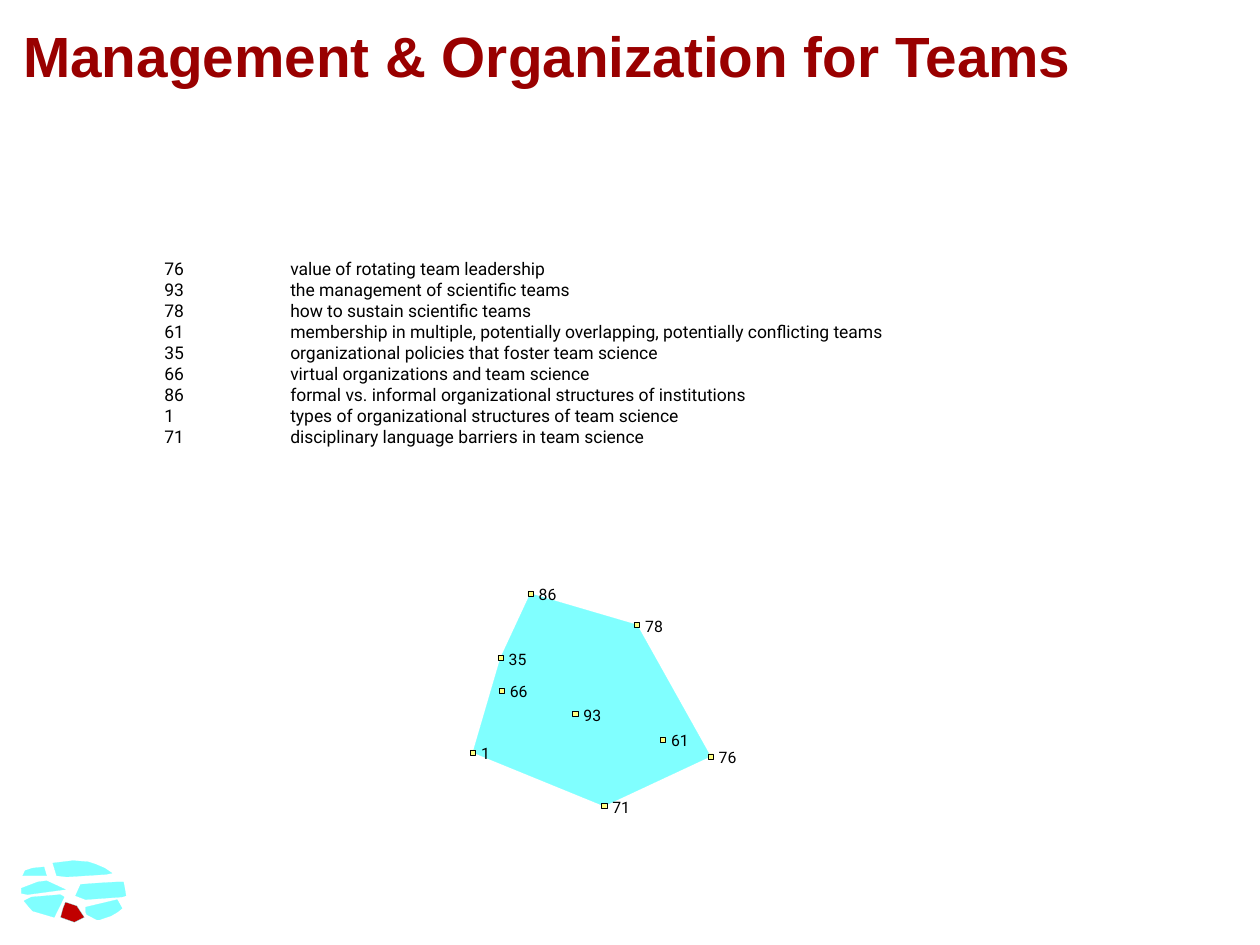
from pptx import Presentation
from pptx.dml.color import RGBColor
from pptx.enum import shapes, text
from pptx.oxml import parse_xml
from pptx.oxml.ns import nsdecls
from pptx.util import Pt

DARK_RED = RGBColor(0x99, 0x00, 0x00)
RED = RGBColor(0xC0, 0x00, 0x00)
CYAN = RGBColor(0x80, 0xFF, 0xFF)
YELLOW = RGBColor(0xFF, 0xFF, 0x80)
BLACK = RGBColor(0x00, 0x00, 0x00)

TOPICS = [
    (76, "value of rotating team leadership"),
    (93, "the management of scientific teams"),
    (78, "how to sustain scientific teams"),
    (61, "membership in multiple, potentially overlapping, potentially conflicting teams"),
    (35, "organizational policies that foster team science"),
    (66, "virtual organizations and team science"),
    (86, "formal vs. informal organizational structures of institutions"),
    (1, "types of organizational structures of team science"),
    (71, "disciplinary language barriers in team science"),
]

# Centre of each topic's marker on the cluster map
MARKERS = {
    1: (270.2, 430), 35: (286, 376), 61: (378.8, 422.6),
    66: (286.6, 394.6), 71: (345.2, 460.6), 76: (406, 432.2),
    78: (364, 357.1), 86: (303.1, 339.2), 93: (328.7, 408),
}
CLUSTER_EDGE = [1, 71, 76, 78, 86, 35]
MARKER_SIZE = 3

# Overview of all clusters; the current one is red
OVERVIEW = [
    (RED, [(34.6, 524.2), (42.5, 527), (48.2, 524.2), (43.9, 517.7),
           (37.4, 515.5), (36, 519.1)]),
    (CYAN, [(49, 521.3), (49.7, 522.7), (55.4, 525.6), (56.9, 525.6),
            (63.4, 523.4), (67, 521.3), (69.8, 519.1), (67, 514.1), (49, 518.4)]),
    (CYAN, [(13, 500.4), (26.6, 500.4), (25.2, 495.4), (18.7, 496.1), (14.4, 497.5)]),
    (CYAN, [(13.7, 514.8), (17.3, 519.1), (18.7, 520.6), (31, 524.2),
            (36.7, 512.6), (34.6, 511.2), (18, 512.6)]),
    (CYAN, [(12.2, 507.6), (12.2, 510.5), (15.8, 511.2), (37.4, 508.3),
            (26.6, 503.3), (21.6, 504)]),
    (CYAN, [(30.2, 493.2), (32.4, 500.4), (38.2, 501.1), (60.5, 499.7),
            (64.1, 499), (59.8, 496.1), (54.7, 493.9), (50.4, 492.5), (41.8, 491.8)]),
    (CYAN, [(43.2, 511.9), (49, 514.1), (69.8, 512.6), (72, 511.9), (71.3, 507.6),
            (70.6, 504), (67, 504), (55.4, 504.7), (46.1, 505.4)]),
]


def paint(shape, fill, line):
    shape.shadow.inherit = False
    shape.fill.solid()
    shape.fill.fore_color.rgb = fill
    shape.line.color.rgb = line
    shape.line.width = Pt(0.1)


def add_polygon(container, points, fill):
    corners = [(Pt(x), Pt(y)) for x, y in points]
    builder = container.build_freeform(*corners[0], scale=1.0)
    builder.add_line_segments(corners[1:], close=True)
    paint(builder.convert_to_shape(), fill, CYAN)


deck = Presentation()
deck.slide_width, deck.slide_height = Pt(720), Pt(540)
page = deck.slides.add_slide(deck.slide_layouts[5])

# Title
title = page.shapes.title
title.left, title.top, title.width, title.height = Pt(6), Pt(6.2), Pt(708), Pt(50.4)
frame = title.text_frame
frame.auto_size = text.MSO_AUTO_SIZE.NONE
frame.vertical_anchor = text.MSO_ANCHOR.MIDDLE
para = frame.paragraphs[0]
para.alignment = text.PP_ALIGN.LEFT
span = para.add_run()
span.text = "Management & Organization for Teams"
span.font.name, span.font.size, span.font.bold = "Arial", Pt(32.4), True
span.font.color.rgb = DARK_RED

# Topic list: number and wording set on tab stops
box = page.shapes.add_textbox(Pt(59.8), Pt(144), Pt(576), Pt(128))
frame = box.text_frame
frame.word_wrap = True
for index, (number, wording) in enumerate(TOPICS):
    para = frame.paragraphs[0] if index == 0 else frame.add_paragraph()
    props = para._p.get_or_add_pPr()
    props.set("marL", str(Pt(27)))
    props.set("indent", str(Pt(-27)))
    props.set("defTabSz", str(Pt(72)))
    props.append(parse_xml(
        f'<a:tabLst {nsdecls("a")}><a:tab pos="{Pt(18)}" algn="r"/></a:tabLst>'))
    span = para.add_run()
    span.text = f"\t{number}\t{wording}"
    span.font.name, span.font.size = "Roboto", Pt(10)
    span.font.color.rgb = BLACK

# Cluster map
add_polygon(page.shapes, [MARKERS[number] for number in CLUSTER_EDGE], CYAN)
for number, (x, y) in MARKERS.items():
    marker = page.shapes.add_shape(
        shapes.MSO_SHAPE.RECTANGLE, Pt(x - MARKER_SIZE / 2), Pt(y - MARKER_SIZE / 2),
        Pt(MARKER_SIZE), Pt(MARKER_SIZE))
    paint(marker, YELLOW, BLACK)

    label = page.shapes.add_textbox(
        Pt(x + 2.5), Pt(y - 4.8), Pt(11.5 if number < 10 else 16.5), Pt(12))
    frame = label.text_frame
    frame.margin_left = frame.margin_top = frame.margin_right = frame.margin_bottom = 0
    frame.word_wrap = False
    span = frame.paragraphs[0].add_run()
    span.text = f" {number}"
    span.font.name, span.font.size = "Roboto", Pt(9)
    span.font.color.rgb = BLACK

# Overview in the corner
overview = page.shapes.add_group_shape()
for fill, points in OVERVIEW:
    add_polygon(overview.shapes, points, fill)

deck.save("out.pptx")
